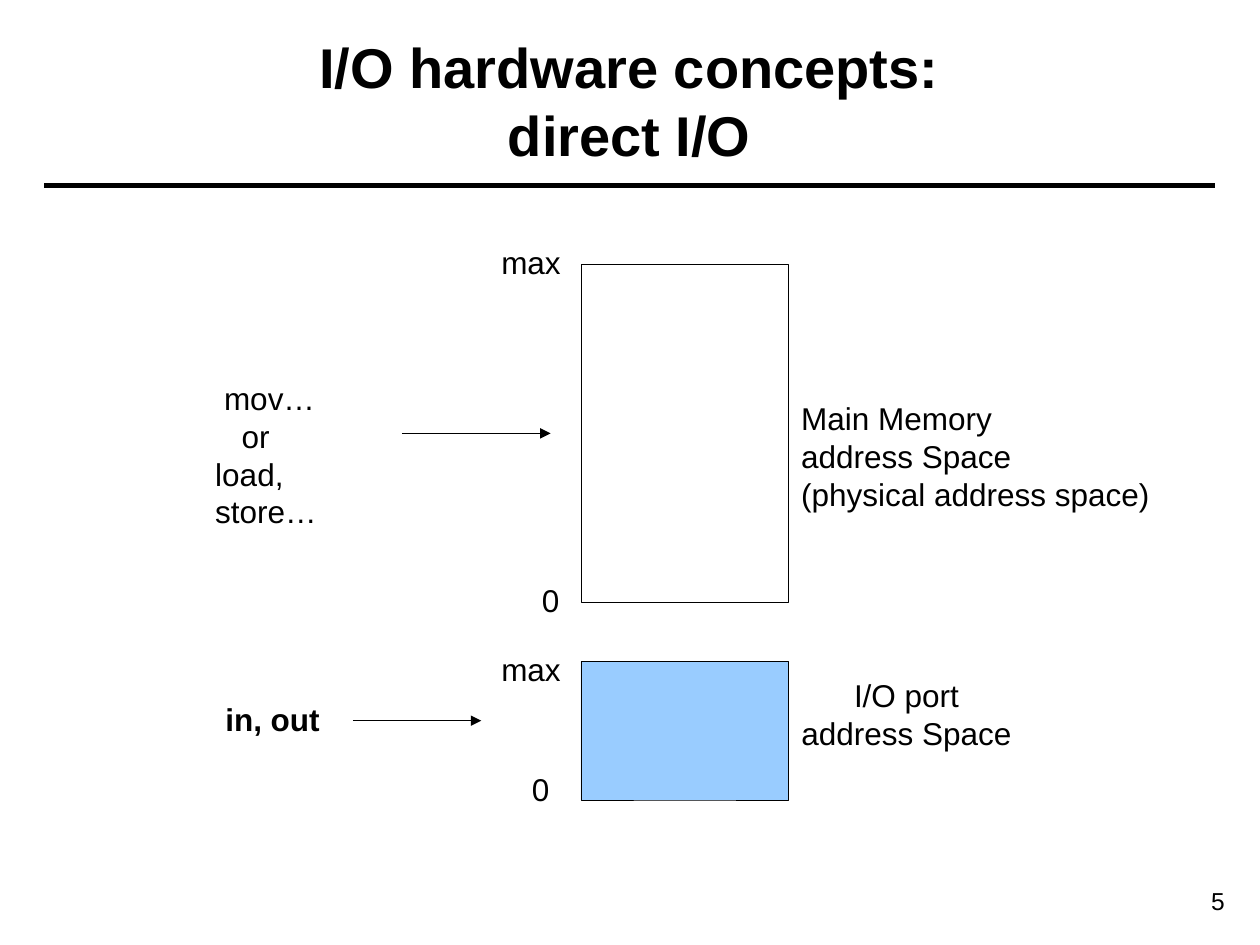
from pptx import Presentation
from pptx.dml.color import RGBColor
from pptx.enum.shapes import MSO_CONNECTOR, MSO_SHAPE
from pptx.enum.text import MSO_ANCHOR, MSO_AUTO_SIZE, PP_ALIGN
from pptx.oxml.ns import qn
from pptx.util import Inches, Pt
from lxml import etree

LEFT, CENTER, RIGHT = PP_ALIGN.LEFT, PP_ALIGN.CENTER, PP_ALIGN.RIGHT
TOP, MIDDLE = MSO_ANCHOR.TOP, MSO_ANCHOR.MIDDLE
FIT, FIXED = MSO_AUTO_SIZE.SHAPE_TO_FIT_TEXT, MSO_AUTO_SIZE.NONE
RECT, STRAIGHT = MSO_SHAPE.RECTANGLE, MSO_CONNECTOR.STRAIGHT
COLORS = {"ink": "000000", "port": "99CCFF"}


def write_text(tf, text, size=18, bold=False, align=LEFT, indents=(), font="Arial"):
    """Write one paragraph per line; a vertical tab breaks a line inside one."""
    for i, line in enumerate(text.split("\n")):
        p = tf.paragraphs[0] if i == 0 else tf.add_paragraph()
        if indents:
            p._p.get_or_add_pPr().set("marL", str(Inches(indents[i])))
        p.alignment = align
        p.text = line
        for r in p.runs:
            r.font.name, r.font.size, r.font.bold = font, Pt(size), bold
            r.font.color.rgb = RGBColor.from_string(COLORS["ink"])


class Diagram:
    """Draws styled elements on the current slide."""

    def __init__(self, slide, thin=0.25):
        self.s = slide
        self.thin = thin

    def text(self, x, y, w, h, text, wrap=False, inset=True, anchor=TOP, **fmt):
        """Add a text box."""
        tf = self.s.shapes.add_textbox(*map(Inches, (x, y, w, h))).text_frame
        tf.word_wrap = wrap
        tf.auto_size = FIXED if wrap else FIT
        tf.vertical_anchor = anchor
        tf.margin_left = tf.margin_right = Inches(0.1 if inset else 0)
        tf.margin_top = tf.margin_bottom = Inches(0.05 if inset else 0)
        write_text(tf, text, **fmt)

    def box(self, x, y, w, h, fill=None):
        """Add an outlined rectangle."""
        sp = self.s.shapes.add_shape(RECT, *map(Inches, (x, y, w, h)))
        sp.shadow.inherit = False
        if fill:
            sp.fill.solid()
            sp.fill.fore_color.rgb = RGBColor.from_string(COLORS[fill])
        else:
            sp.fill.background()
        self.stroke(sp, self.thin)

    def line(self, x1, x2, y, width=None, arrow=False):
        """Add a horizontal line, optionally with an arrowhead."""
        sp = self.s.shapes.add_connector(STRAIGHT, *map(Inches, (x1, y, x2, y)))
        self.stroke(sp, width or self.thin)
        if arrow:
            ln = sp.line._get_or_add_ln()
            etree.SubElement(ln, qn("a:tailEnd"), type="triangle")
        etree.SubElement(sp._element.spPr, qn("a:effectLst"))

    def stroke(self, sp, width):
        """Set the outline of a shape or connector."""
        sp.line.color.rgb = RGBColor.from_string(COLORS["ink"])
        sp.line.width = Pt(width)


def main():
    """Build the direct I/O slide."""
    prs = Presentation()
    prs.slide_width, prs.slide_height = Inches(10), Inches(7.5)
    d = Diagram(prs.slides.add_slide(prs.slide_layouts[6]))

    d.line(0.35, 9.64, 1.47, width=3)
    d.text(8.78, 6.98, 1.04, 0.34, "5", wrap=True, size=14, align=RIGHT)
    d.text(0.35, 0.17, 9.29, 1.25, "I/O hardware concepts:\vdirect I/O",
           wrap=True, inset=False, anchor=MIDDLE, size=32, bold=True, align=CENTER)

    for y, h, fill in ((2.1, 2.68, None), (5.25, 1.1, "port")):
        d.box(4.61, y, 1.65, h, fill)
    for y in (1.88, 5.11):
        d.text(3.88, y, 0.67, 0.4, "max", align=CENTER)
    for x, y in ((4.2, 4.56), (4.12, 6.06)):
        d.text(x, y, 0.34, 0.4, "0", align=CENTER)

    d.text(6.26, 3.12, 2.99, 1.01,
           "Main Memory\vaddress Space\n(physical address space)")
    d.text(6.26, 5.32, 1.87, 0.7, "I/O port\vaddress Space", align=CENTER)
    d.text(1.61, 2.96, 1.61, 1, "mov…\nor\nload, store…", indents=(0.07, 0.21, 0))
    d.text(1.69, 5.51, 0.96, 0.41, "in, out", bold=True)

    for x1, x2, y in ((3.19, 4.37, 3.44), (2.8, 3.82, 5.72)):
        d.line(x1, x2, y, arrow=True)

    prs.save("out.pptx")


if __name__ == "__main__":
    main()
